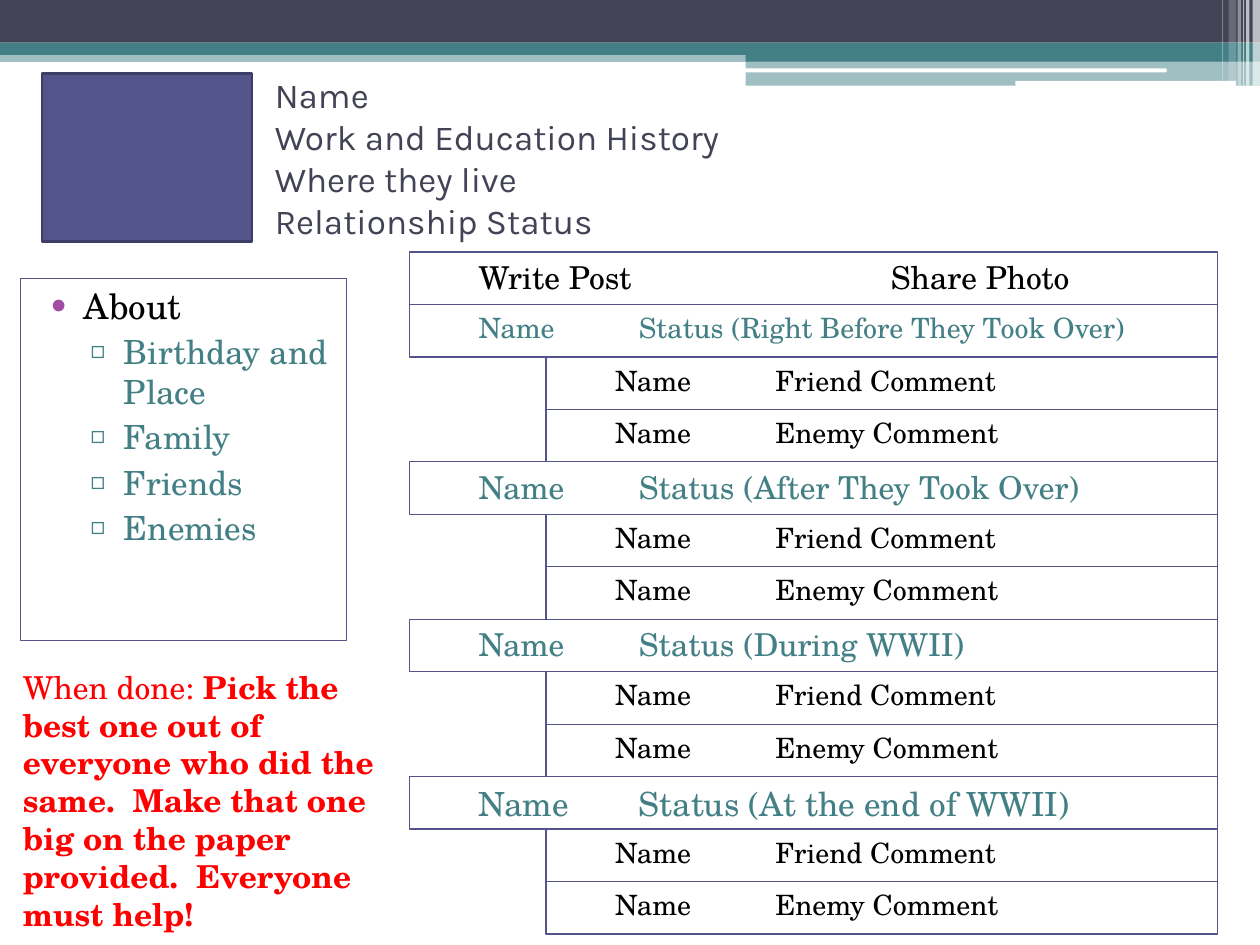
from dataclasses import dataclass

from lxml import etree
from pptx import Presentation
from pptx import util as u
from pptx.dml.color import RGBColor
from pptx.enum import shapes, text
from pptx.oxml import ns


@dataclass(frozen=True)
class Theme:
    """Colours, fonts and type sizes of the slide."""
    slate: str = "424456"
    teal: str = "438086"
    white: str = "FFFFFF"
    black: str = "000000"
    red: str = "FF0000"
    purple: str = "A04DA3"
    indigo: str = "53548A"
    dark_indigo: str = "3D3E66"
    serif: str = "TeX Gyre Schola"
    sans: str = "Karla"
    small: int = 16
    medium: int = 18
    large: int = 19
    heading: int = 20


THEME = Theme()
RECTANGLE = shapes.MSO_SHAPE.RECTANGLE


def add_box(slide, box, fill=None, line=None, weight=0.75, opacity=100, kind=RECTANGLE):
    """Add a flat shape at a (left, top, width, height) box in centimetres."""
    shape = slide.shapes.add_shape(kind, *(u.Cm(length) for length in box))
    shape.shadow.inherit = False
    if fill:
        shape.fill.solid()
        shape.fill.fore_color.rgb = RGBColor.from_string(fill)
        if opacity < 100:
            colour = shape.fill._xPr.find(".//" + ns.qn("a:srgbClr"))
            etree.SubElement(colour, ns.qn("a:alpha"), val=str(opacity * 1000))
    else:
        shape.fill.background()
    if line:
        shape.line.color.rgb = RGBColor.from_string(line)
        shape.line.width = u.Pt(weight)
    else:
        shape.line.fill.background()
    return shape


def prepare_frame(shape, anchor=text.MSO_ANCHOR.TOP):
    """Make the text of a shape wrap and return its text frame."""
    frame = shape.text_frame
    frame.word_wrap = True
    frame.vertical_anchor = anchor
    frame.paragraphs[0].alignment = text.PP_ALIGN.LEFT
    return frame


def add_run(paragraph, words, size, colour, font=THEME.serif, bold=False):
    """Append one formatted run to a paragraph."""
    run = paragraph.add_run()
    run.text = words
    run.font.size = u.Pt(size)
    run.font.name = font
    run.font.bold = bold
    run.font.color.rgb = RGBColor.from_string(colour)


def indent(paragraph, margin, hanging, bullet=None, bullet_colour=None):
    """Set a hanging indent in centimetres, the tab distance and an optional bullet."""
    paragraph.alignment = text.PP_ALIGN.LEFT
    paragraph.space_before = u.Pt(3)
    properties = paragraph._p.get_or_add_pPr()
    properties.set("marL", str(u.Cm(margin)))
    properties.set("indent", str(-u.Cm(hanging)))
    properties.set("defTabSz", str(u.Cm(2.54)))
    if bullet:
        colour = etree.SubElement(properties, ns.qn("a:buClr"))
        etree.SubElement(colour, ns.qn("a:srgbClr"), val=bullet_colour)
        etree.SubElement(properties, ns.qn("a:buFont"), typeface=THEME.serif)
        etree.SubElement(properties, ns.qn("a:buChar"), char=bullet)


def add_banner(slide, box):
    """Draw the layered bands and the light stripes along the top edge."""
    left, top, width, height = box
    step = 15.03
    bands = [
        (0, 1.02, width, 0.23, THEME.teal, 50),
        (0, 0, width, 0.86, THEME.slate, 100),
        (0, 0.86, width, 0.25, THEME.teal, 100),
        (step, 0.99, width - step, 0.25, THEME.teal, 100),
        (step, 1.23, width - step, 0.5, THEME.teal, 50),
    ]
    bars = [(15.01, 1.38, 8.51, 0.08), (20.47, 1.63, 4.45, 0.1)]
    stripes = [
        (25.25, 0.15, height, 65),
        (25.12, 0.07, height, 65),
        (25.06, 0.02, height, 60),
        (24.95, 0.07, height, 40),
        (24.77, 0.15, 1.63, 20),
        (24.64, 0.02, 1.63, 30),
    ]
    for x, y, band_width, band_height, colour, opacity in bands:
        add_box(slide, (left + x, top + y, band_width, band_height), colour, opacity=opacity)
    for x, y, bar_width, bar_height in bars:
        add_box(slide, (left + x, top + y, bar_width, bar_height), THEME.white,
                kind=shapes.MSO_SHAPE.ROUNDED_RECTANGLE)
    for x, stripe_width, stripe_height, opacity in stripes:
        add_box(slide, (left + x, top, stripe_width, stripe_height), THEME.white, opacity=opacity)


def add_profile(slide, box):
    """Place the portrait block and the personal details beside it."""
    left, top, width, height = box
    add_box(slide, (left, top, 4.23, height), THEME.indigo, THEME.dark_indigo, 1.5)
    details = add_box(slide, (left + 4.44, top + 0.21, width - 4.44, 2.97))
    paragraph = prepare_frame(details, text.MSO_ANCHOR.MIDDLE).paragraphs[0]
    lines = ["Name", "Work and Education History", "Where they live", "Relationship Status"]
    for index, line in enumerate(lines):
        if index:
            paragraph.add_line_break()
        add_run(paragraph, line, THEME.heading, THEME.slate, THEME.sans)


def add_about(slide, box):
    """Place the bordered About list."""
    frame = prepare_frame(add_box(slide, box, line=THEME.indigo))
    heading = frame.paragraphs[0]
    indent(heading, 1.02, 0.71, "•", THEME.purple)
    add_run(heading, "About", THEME.heading, THEME.black)
    for item in ["Birthday and Place", "Family", "Friends", "Enemies"]:
        paragraph = frame.add_paragraph()
        indent(paragraph, 1.83, 0.69, "▫", THEME.teal)
        add_run(paragraph, item, THEME.large, THEME.teal)


def add_wall(slide, box):
    """Stack the post bar, each status and its two comments in equal rows."""
    left, top, width, height = box
    statuses = [
        ("Right Before They Took Over", THEME.small),
        ("After They Took Over", THEME.medium),
        ("During WWII", THEME.medium),
        ("At the end of WWII", THEME.large),
    ]
    rows = [("Write Post\t\t\tShare Photo", THEME.medium, THEME.black, 0)]
    for status, size in statuses:
        rows.append((f"Name\tStatus ({status})", size, THEME.teal, 0))
        for author in ("Friend", "Enemy"):
            rows.append((f"Name\t{author} Comment", THEME.small, THEME.black, 2.75))
    row_height = height / len(rows)
    for index, (words, size, colour, inset) in enumerate(rows):
        row_box = (left + inset, top + index * row_height, width - inset, row_height)
        paragraph = prepare_frame(add_box(slide, row_box, line=THEME.indigo)).paragraphs[0]
        indent(paragraph, 1.83, 0.69)
        add_run(paragraph, words, size, colour)


def add_instruction(slide, box):
    """Place the closing instruction."""
    textbox = slide.shapes.add_textbox(*(u.Cm(length) for length in box))
    paragraph = prepare_frame(textbox).paragraphs[0]
    add_run(paragraph, "When done: ", THEME.medium, THEME.red)
    add_run(paragraph, "Pick the best one out of everyone who did the same.  Make that one big "
            "on the paper provided.  Everyone must help!", THEME.medium, THEME.red, bold=True)


def main():
    """Build the slide and save it."""
    presentation = Presentation()
    presentation.slide_width = u.Cm(25.4)
    presentation.slide_height = u.Cm(19.05)
    slide = presentation.slides.add_slide(presentation.slide_layouts[6])
    add_banner(slide, (0, 0, 25.4, 1.73))
    add_profile(slide, (0.85, 1.48, 16.71, 3.39))
    add_about(slide, (0.42, 5.61, 6.56, 7.3))
    add_wall(slide, (8.26, 5.08, 16.29, 13.75))
    add_instruction(slide, (0.21, 13.34, 7.83, 5.64))
    presentation.save("out.pptx")


if __name__ == "__main__":
    main()
